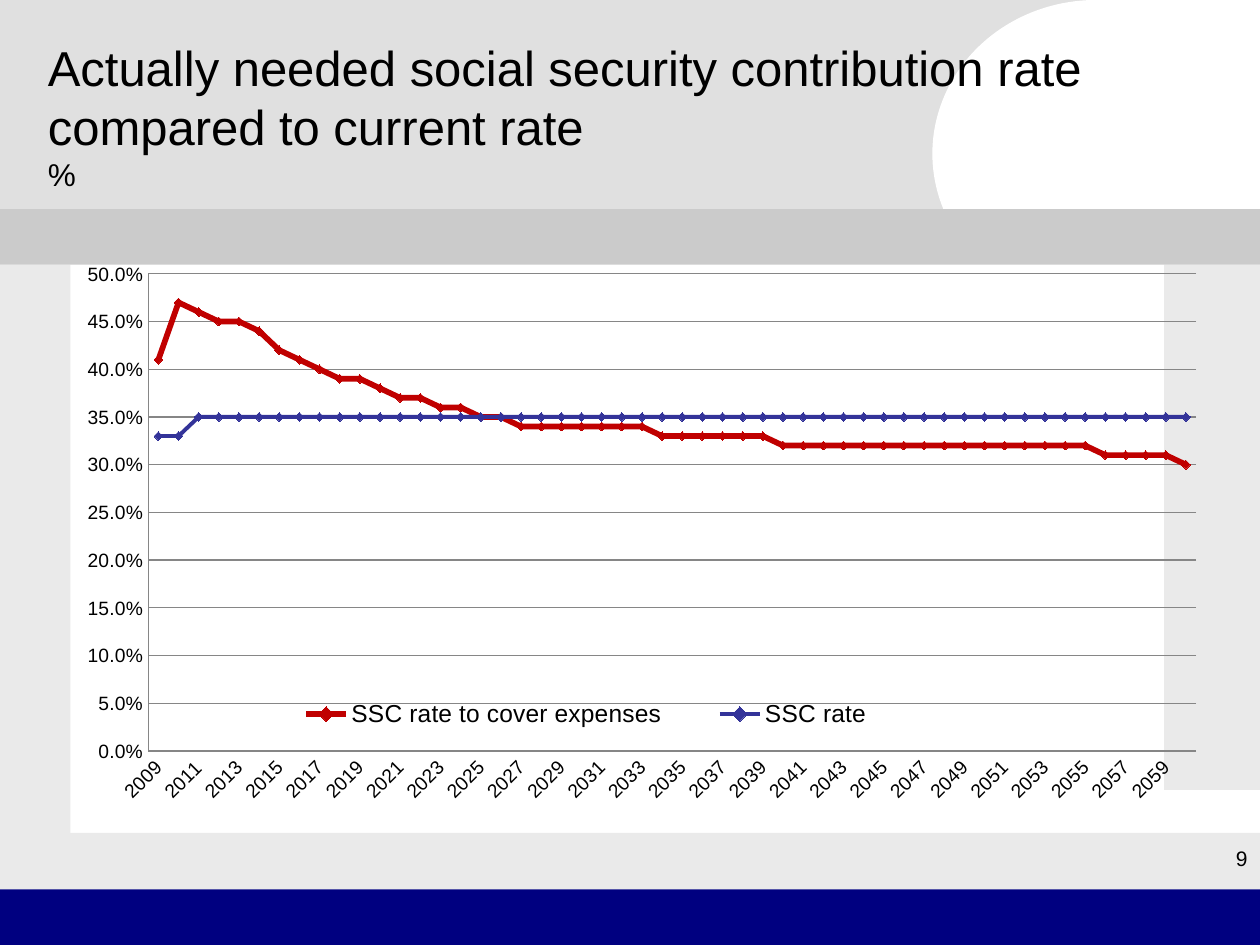
from lxml import etree
from pptx import Presentation
from pptx.chart.data import CategoryChartData
from pptx.dml.color import RGBColor
from pptx.enum import chart as charts, shapes, text
from pptx.oxml import ns
from pptx.util import Inches, Pt

BLACK = RGBColor(0x00, 0x00, 0x00)
WHITE = RGBColor(0xFF, 0xFF, 0xFF)
HEADER_GREY = RGBColor(0xE0, 0xE0, 0xE0)
BAND_GREY = RGBColor(0xCB, 0xCB, 0xCB)
EDGE_GREY = RGBColor(0xEA, 0xEA, 0xEA)
GRID_GREY = RGBColor(0x86, 0x86, 0x86)
NAVY = RGBColor(0x00, 0x00, 0x80)
RED = RGBColor(0xC0, 0x00, 0x00)
BLUE = RGBColor(0x33, 0x33, 0x99)
FONT = "Arial"

TITLE = "Actually needed social security contribution rate compared to current rate"
UNIT = "%"
PAGE_NUMBER = "9"

RECT = shapes.MSO_SHAPE.RECTANGLE
OVAL = shapes.MSO_SHAPE.OVAL
BACKDROP = [  # preset, (left, top, width, height), fill
    (RECT, (0, 0, 9.09, 1.69), HEADER_GREY),
    (OVAL, (7.4, 0, 2.6, 2.44), WHITE),
    (RECT, (0, 2.1, 0.56, 4.96), EDGE_GREY),
    (RECT, (0.26, 6.61, 9.74, 0.45), EDGE_GREY),
    (RECT, (0, 7.06, 10, 0.44), NAVY),
    (RECT, (9.24, 2.1, 0.76, 4.17), EDGE_GREY),
    (RECT, (8.62, 0, 1.38, 2.02), WHITE),
    (RECT, (0, 1.66, 10, 0.44), BAND_GREY),
]

YEARS = [str(year) for year in range(2009, 2061)]
NEEDED_RATE = [
    0.41, 0.47, 0.46, 0.45, 0.45, 0.44, 0.42, 0.41, 0.40, 0.39,
    0.39, 0.38, 0.37, 0.37, 0.36, 0.36, 0.35, 0.35,
] + [0.34] * 7 + [0.33] * 6 + [0.32] * 16 + [0.31] * 4 + [0.30]
CURRENT_RATE = [0.33] * 2 + [0.35] * (len(YEARS) - 2)
SERIES = [  # name, values, colour, line width
    ("SSC rate to cover expenses", NEEDED_RATE, RED, 3.25),
    ("SSC rate", CURRENT_RATE, BLUE, 2.25),
]
PLOT_LAYOUT = (0.065, 0.032, 0.921, 0.789)
LEGEND_LAYOUT = (0.16, 0.73, 0.58, 0.06)


def style(font, size):
    font.name, font.size, font.color.rgb = FONT, Pt(size), BLACK


def place(shape, area):
    shape.left, shape.top, shape.width, shape.height = map(Inches, area)


def set_layout(parent, area, before, inner=False):
    """Fix a chart part at fractions of the chart area."""
    for old in parent.findall(ns.qn("c:layout")):
        parent.remove(old)
    layout = etree.Element(ns.qn("c:layout"))
    manual = etree.SubElement(layout, ns.qn("c:manualLayout"))
    settings = [("layoutTarget", "inner")] if inner else []
    settings += [("xMode", "edge"), ("yMode", "edge")]
    settings += zip("xywh", map(str, area))
    for tag, value in settings:
        etree.SubElement(manual, ns.qn("c:" + tag)).set("val", value)
    parent.find(ns.qn(before)).addprevious(layout)


def add_backdrop(page):
    for preset, area, color in BACKDROP:
        shape = page.shapes.add_shape(preset, *map(Inches, area))
        shape.shadow.inherit = False
        shape.fill.solid()
        shape.fill.fore_color.rgb = color
        shape.line.fill.background()


def add_title(page):
    title = page.shapes.title
    page.shapes._spTree.append(title._element)  # in front of the backdrop
    place(title, (0.28, 0.29, 8.51, 1.25))
    frame = title.text_frame
    frame.text = TITLE + "\v" + UNIT
    frame.word_wrap = True
    frame.auto_size = text.MSO_AUTO_SIZE.NONE
    frame.vertical_anchor = text.MSO_ANCHOR.MIDDLE
    para = frame.paragraphs[0]
    para.alignment = text.PP_ALIGN.LEFT
    para.line_spacing = 1.0
    for span, size in zip(para.runs, (28, 18)):
        style(span.font, size)


def add_rate_chart(page):
    data = CategoryChartData(number_format="0.0%")
    data.categories = YEARS
    for name, values, _, _ in SERIES:
        data.add_series(name, values)
    area = map(Inches, (0.59, 2.02, 9.03, 4.8))
    chart = page.shapes.add_chart(charts.XL_CHART_TYPE.LINE_MARKERS, *area, data).chart
    style(chart.font, 18)
    chart.has_title = False
    plot = chart.plots[0]
    plot.vary_by_categories = False
    for series, (_, _, color, width) in zip(plot.series, SERIES):
        series.smooth = False
        series.format.line.color.rgb = color
        series.format.line.width = Pt(width)
        marker = series.marker
        marker.style, marker.size = charts.XL_MARKER_STYLE.DIAMOND, 5
        marker.format.fill.solid()
        marker.format.fill.fore_color.rgb = color
        marker.format.line.color.rgb = color

    years, rates = chart.category_axis, chart.value_axis
    for axis in (years, rates):
        axis.major_tick_mark = axis.minor_tick_mark = charts.XL_TICK_MARK.NONE
        axis.format.line.color.rgb = GRID_GREY
        style(axis.tick_labels.font, 11)
    years._element.find(ns.qn("c:txPr")).find(ns.qn("a:bodyPr")).set("rot", "-2700000")
    skip = etree.Element(ns.qn("c:tickLblSkip"))
    skip.set("val", "2")
    years._element.find(ns.qn("c:noMultiLvlLbl")).addprevious(skip)
    rates.minimum_scale, rates.maximum_scale, rates.major_unit = 0, 0.5, 0.05
    rates.major_gridlines.format.line.color.rgb = GRID_GREY
    rates.tick_labels.number_format = "0.0%"
    rates.tick_labels.number_format_is_linked = False

    chart.has_legend = True
    legend = chart.legend
    legend.position = charts.XL_LEGEND_POSITION.RIGHT
    legend.include_in_layout = False
    style(legend.font, 14)
    set_layout(legend._element, LEGEND_LAYOUT, "c:overlay")
    plot_area = chart._chartSpace.chart.plotArea
    set_layout(plot_area, PLOT_LAYOUT, "c:lineChart", inner=True)


def add_page_number(page):
    box = page.shapes.add_textbox(*map(Inches, (7.74, 6.66, 2.26, 0.5)))
    box.text_frame.word_wrap = True
    para = box.text_frame.paragraphs[0]
    para.text = PAGE_NUMBER
    para.alignment = text.PP_ALIGN.RIGHT
    style(para.runs[0].font, 12)


def main():
    deck = Presentation()
    deck.slide_width, deck.slide_height = Inches(10), Inches(7.5)
    page = deck.slides.add_slide(deck.slide_layouts[5])
    add_backdrop(page)
    add_title(page)
    add_rate_chart(page)
    add_page_number(page)
    deck.save("out.pptx")


if __name__ == "__main__":
    main()
